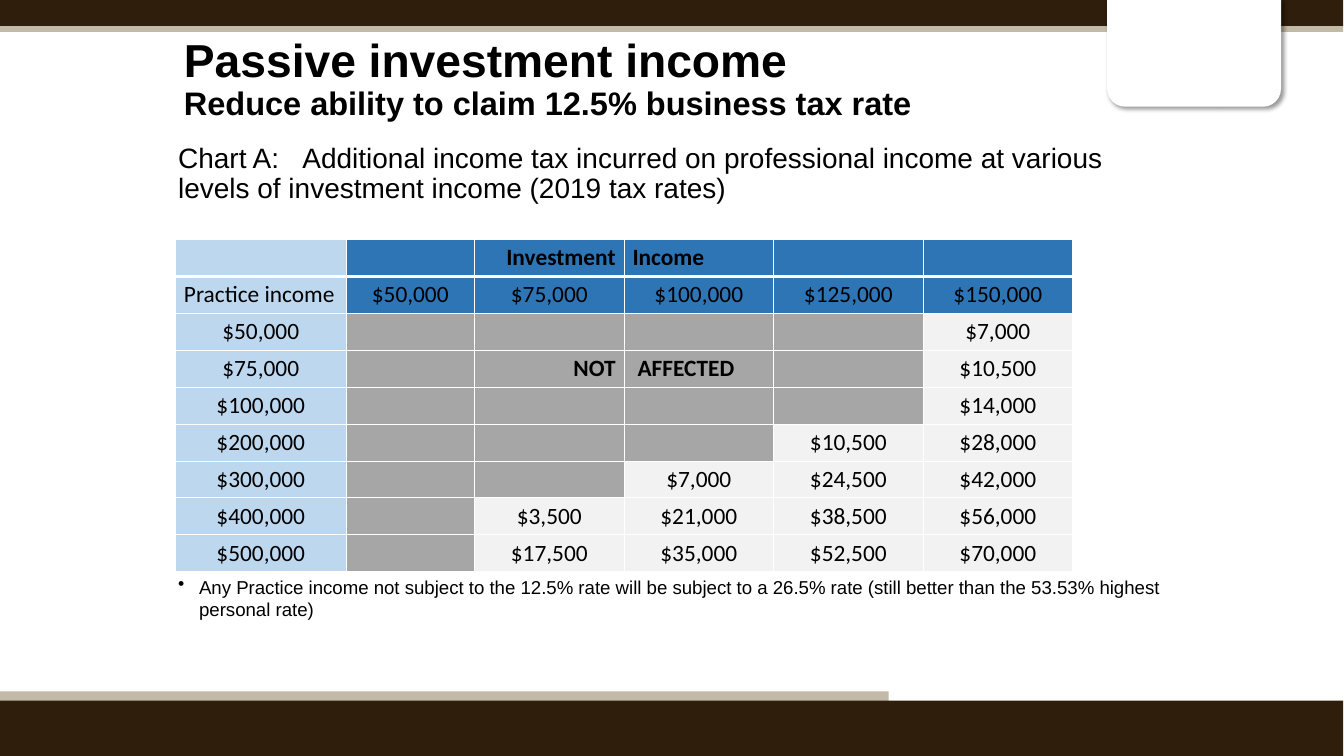
from dataclasses import dataclass

from pptx import Presentation
from pptx import util as u
from pptx.dml.color import RGBColor
from pptx.enum import shapes, text
from pptx.oxml import parse_xml
from pptx.oxml.ns import nsdecls

Inches = u.Inches
ALIGN = text.PP_ALIGN


@dataclass(frozen=True)
class Theme:
    """Colours, fonts and type sizes of the slide."""
    white: str = "FFFFFF"
    black: str = "000000"
    brown: str = "2F1E0C"
    sand: str = "C2B9A6"
    blue: str = "2E75B6"
    pale_blue: str = "BDD7EE"
    grey: str = "A6A6A6"
    pale_grey: str = "F2F2F2"
    font: str = "Arial"
    table_font: str = "Calibri"
    title: float = 39.6
    subtitle: float = 27.9
    body: float = 24
    cell: float = 20
    note: float = 16


THEME = Theme()
LEVELS = ["$50,000", "$75,000", "$100,000", "$125,000", "$150,000"]
ADDED_TAX = {
    "$50,000": ["$7,000"],
    "$75,000": ["$10,500"],
    "$100,000": ["$14,000"],
    "$200,000": ["$10,500", "$28,000"],
    "$300,000": ["$7,000", "$24,500", "$42,000"],
    "$400,000": ["$3,500", "$21,000", "$38,500", "$56,000"],
    "$500,000": ["$17,500", "$35,000", "$52,500", "$70,000"],
}
COLUMN_WIDTHS = [2.03, 1.53] + [1.78] * 4
ROW_HEIGHT = 0.44


def add_block(slide, kind, left, top, width, height, color):
    """Add a plain filled shape without outline or shadow."""
    shape = slide.shapes.add_shape(
        kind, Inches(left), Inches(top), Inches(width), Inches(height))
    shape.shadow.inherit = False
    shape.fill.solid()
    shape.fill.fore_color.rgb = RGBColor.from_string(color)
    shape.line.fill.background()
    return shape


def add_tab(slide):
    """Add the white tab that hangs from the top edge with a soft shadow."""
    shape = add_block(slide, shapes.MSO_SHAPE.ROUND_2_SAME_RECTANGLE,
                      13.18, -0.01, 2.07, 1.28, THEME.white)
    shape.rotation = 180
    effects = shape._element.spPr.find("{*}effectLst")
    effects.append(parse_xml(
        f'<a:outerShdw {nsdecls("a")} blurRad="{u.Pt(4)}" dist="{u.Pt(3)}" '
        f'dir="2700000" rotWithShape="0"><a:srgbClr val="{THEME.black}">'
        '<a:alpha val="40000"/></a:srgbClr></a:outerShdw>'))


def write(paragraph, words, *, size, font=THEME.font, bold=False,
          align=ALIGN.LEFT, spacing=None, bullet=None, indent=0, tab=None):
    """Write formatted words into a paragraph."""
    properties = paragraph._p.get_or_add_pPr()
    if bullet:
        properties.set("marL", str(Inches(indent)))
        properties.set("indent", str(-Inches(indent)))
        properties.append(parse_xml(f'<a:buChar {nsdecls("a")} char="{bullet}"/>'))
    if tab:
        properties.append(parse_xml(
            f'<a:tabLst {nsdecls("a")}><a:tab pos="{Inches(tab)}" algn="l"/></a:tabLst>'))
    paragraph.alignment = align
    if spacing:
        paragraph.line_spacing = spacing
    run = paragraph.add_run()
    run.text = words
    run.font.name = font
    run.font.size = u.Pt(size)
    run.font.bold = bold
    run.font.color.rgb = RGBColor.from_string(THEME.black)


def add_text_frame(slide, left, top, width, height):
    """Add a wrapping text box without insets and return its frame."""
    frame = slide.shapes.add_textbox(
        Inches(left), Inches(top), Inches(width), Inches(height)).text_frame
    frame.word_wrap = True
    frame.margin_left = frame.margin_right = 0
    frame.margin_top = frame.margin_bottom = 0
    return frame


def set_borders(cell, bottom):
    """Draw white cell borders with the given bottom width in points."""
    properties = cell._tc.get_or_add_tcPr()
    for index, (side, width) in enumerate(
            [("L", 1), ("R", 1), ("T", 1), ("B", bottom)]):
        properties.insert(index, parse_xml(
            f'<a:ln{side} {nsdecls("a")} w="{u.Pt(width)}"><a:solidFill>'
            f'<a:srgbClr val="{THEME.white}"/></a:solidFill></a:ln{side}>'))


def fill_cell(cell, words, color, *, align=ALIGN.CENTER, bold=False, bottom=1):
    """Colour a table cell, draw its borders and write its words."""
    cell.fill.solid()
    cell.fill.fore_color.rgb = RGBColor.from_string(color)
    set_borders(cell, bottom)
    if words:
        write(cell.text_frame.paragraphs[0], words, size=THEME.cell,
              font=THEME.table_font, align=align, bold=bold)


def add_tax_table(slide):
    """Add the table of additional tax by practice and investment income."""
    rows = len(ADDED_TAX) + 2
    columns = len(COLUMN_WIDTHS)
    table = slide.shapes.add_table(
        rows, columns, Inches(2.09), Inches(2.85),
        Inches(sum(COLUMN_WIDTHS)), Inches(ROW_HEIGHT * rows)).table
    table.first_row = table.horz_banding = False
    for column, width in zip(table.columns, COLUMN_WIDTHS):
        column.width = Inches(width)
    for row in table.rows:
        row.height = Inches(ROW_HEIGHT)

    split_labels = {(0, 2): ("Investment", ALIGN.RIGHT), (0, 3): ("Income", ALIGN.LEFT),
                    (3, 2): ("NOT", ALIGN.RIGHT), (3, 3): ("AFFECTED", ALIGN.LEFT)}
    grid = [[""] * columns, ["Practice income"] + LEVELS]
    for income, taxes in ADDED_TAX.items():
        grid.append([income] + [""] * (len(LEVELS) - len(taxes)) + taxes)
    for r, values in enumerate(grid):
        for c, value in enumerate(values):
            if c == 0:
                color = THEME.pale_blue
            elif r < 2:
                color = THEME.blue
            else:
                color = THEME.pale_grey if value else THEME.grey
            default_align = ALIGN.LEFT if (r, c) == (1, 0) else ALIGN.CENTER
            words, align = split_labels.get((r, c), (value, default_align))
            fill_cell(table.cell(r, c), words, color, align=align,
                      bold=(r, c) in split_labels, bottom=1 if r else 3)
    table.cell(3, 3).margin_left = Inches(0.16)


def main():
    """Build the slide and save it."""
    presentation = Presentation()
    presentation.slide_width = Inches(16)
    presentation.slide_height = Inches(9)
    slide = presentation.slides.add_slide(presentation.slide_layouts[6])

    for top, width, height, color in [
            (0.3, 16, 0.08, THEME.sand), (0, 16, 0.31, THEME.brown),
            (8.23, 10.59, 0.17, THEME.sand), (8.34, 16, 0.67, THEME.brown)]:
        add_block(slide, shapes.MSO_SHAPE.RECTANGLE, -0.01, top, width, height, color)
    add_tab(slide)

    title = add_text_frame(slide, 2.19, 0.45, 9.5, 1)
    write(title.paragraphs[0], "Passive investment income",
          size=THEME.title, bold=True, spacing=0.9)
    write(title.add_paragraph(), "Reduce ability to claim 12.5% business tax rate",
          size=THEME.subtitle, bold=True, spacing=0.9)

    caption = add_text_frame(slide, 2.12, 1.72, 11.77, 0.8)
    write(caption.paragraphs[0],
          "Chart A:\tAdditional income tax incurred on professional income at various "
          "levels of investment income (2019 tax rates)",
          size=THEME.body, spacing=0.9, tab=1.48)
    add_tax_table(slide)

    note = add_text_frame(slide, 2.12, 6.85, 11.77, 0.55)
    write(note.paragraphs[0],
          "Any Practice income not subject to the 12.5% rate will be subject to a 26.5% "
          "rate (still better than the 53.53% highest personal rate)",
          size=THEME.note, bullet="•", indent=0.25)

    presentation.save("out.pptx")


if __name__ == "__main__":
    main()
